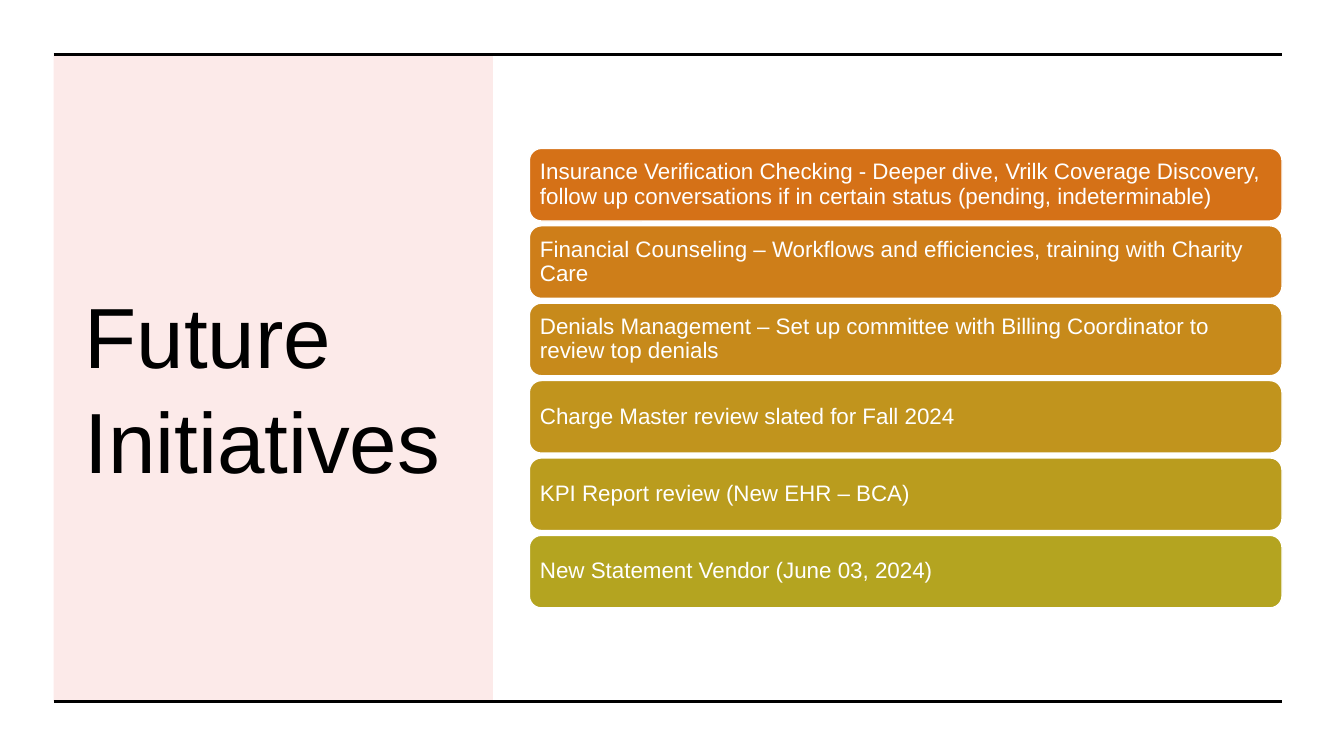
from dataclasses import dataclass

from lxml import etree
from pptx import Presentation
from pptx.dml.color import RGBColor
from pptx.enum.shapes import MSO_CONNECTOR, MSO_SHAPE
from pptx.enum.text import MSO_ANCHOR, PP_ALIGN
from pptx.oxml.ns import qn
from pptx.util import Cm, Pt

RECTANGLE = MSO_SHAPE.RECTANGLE
ROUNDED = MSO_SHAPE.ROUNDED_RECTANGLE
STRAIGHT = MSO_CONNECTOR.STRAIGHT
MIDDLE = MSO_ANCHOR.MIDDLE
LEFT = PP_ALIGN.LEFT


@dataclass(frozen=True)
class Theme:
    font: str = "Arial"
    ink: str = "000000"
    white: str = "FFFFFF"
    panel: str = "E73429"
    panel_alpha: str = "10000"
    title_size: int = 61
    initiative_size: int = 16
    rule_width: float = 2.25
    outline_width: float = 1


THEME = Theme()

INITIATIVES = [
    ("Insurance Verification Checking - Deeper dive, Vrilk Coverage Discovery, "
     "follow up conversations if in certain status (pending, indeterminable)", "D57117"),
    ("Financial Counseling – Workflows and efficiencies, training with Charity Care", "CE7E19"),
    ("Denials Management – Set up committee with Billing Coordinator to review top denials",
     "C78A1B"),
    ("Charge Master review slated for Fall 2024", "C1941D"),
    ("KPI Report review (New EHR – BCA)", "BA9C1E"),
    ("New Statement Vendor (June 03, 2024)", "B4A420"),
]

LEFT_EDGE, RIGHT_EDGE = 1.35, 32.31
TOP_RULE, BOTTOM_RULE = 1.37, 17.68
BAR_LEFT, BAR_TOP, BAR_HEIGHT, BAR_PITCH = 13.34, 3.74, 1.83, 1.95
BAR_INSET = Cm(0.18)


def add_solid(kind, left, top, width, height, color):
    solid = slide.shapes.add_shape(kind, Cm(left), Cm(top), Cm(width), Cm(height))
    solid.shadow.inherit = False
    solid.fill.solid()
    solid.fill.fore_color.rgb = RGBColor.from_string(color)
    return solid


def write(frame, text, size, color, spacing):
    frame.word_wrap = True
    frame.vertical_anchor = MIDDLE
    paragraph = frame.paragraphs[0]
    paragraph.alignment = LEFT
    paragraph.line_spacing = spacing
    run = paragraph.add_run()
    run.text = text
    run.font.name = THEME.font
    run.font.size = Pt(size)
    run.font.color.rgb = RGBColor.from_string(color)


prs = Presentation()
prs.slide_width = Cm(33.87)
prs.slide_height = Cm(19.05)
slide = prs.slides.add_slide(prs.slide_layouts[6])

panel = add_solid(RECTANGLE, LEFT_EDGE, TOP_RULE, 11.07, BOTTOM_RULE - TOP_RULE, THEME.panel)
panel.line.fill.background()
panel_color = panel.fill._xPr.find(qn("a:solidFill"))[0]
etree.SubElement(panel_color, qn("a:alpha"), val=THEME.panel_alpha)

title = slide.shapes.add_textbox(Cm(1.88), Cm(2.72), Cm(9.88), Cm(13.97))
write(title.text_frame, "Future Initiatives", THEME.title_size, THEME.ink, 1.03)

for y in (TOP_RULE, BOTTOM_RULE):
    rule = slide.shapes.add_connector(STRAIGHT, Cm(LEFT_EDGE), Cm(y), Cm(RIGHT_EDGE), Cm(y))
    rule.line.color.rgb = RGBColor.from_string(THEME.ink)
    rule.line.width = Pt(THEME.rule_width)
    etree.SubElement(rule._element.spPr, qn("a:effectLst"))

for index, (initiative, color) in enumerate(INITIATIVES):
    bar = add_solid(ROUNDED, BAR_LEFT, BAR_TOP + index * BAR_PITCH,
                    RIGHT_EDGE - BAR_LEFT, BAR_HEIGHT, color)
    bar.line.color.rgb = RGBColor.from_string(THEME.white)
    bar.line.width = Pt(THEME.outline_width)
    frame = bar.text_frame
    frame.margin_left = frame.margin_right = BAR_INSET
    frame.margin_top = frame.margin_bottom = BAR_INSET
    write(frame, initiative, THEME.initiative_size, THEME.white, 0.9)

prs.save("out.pptx")
